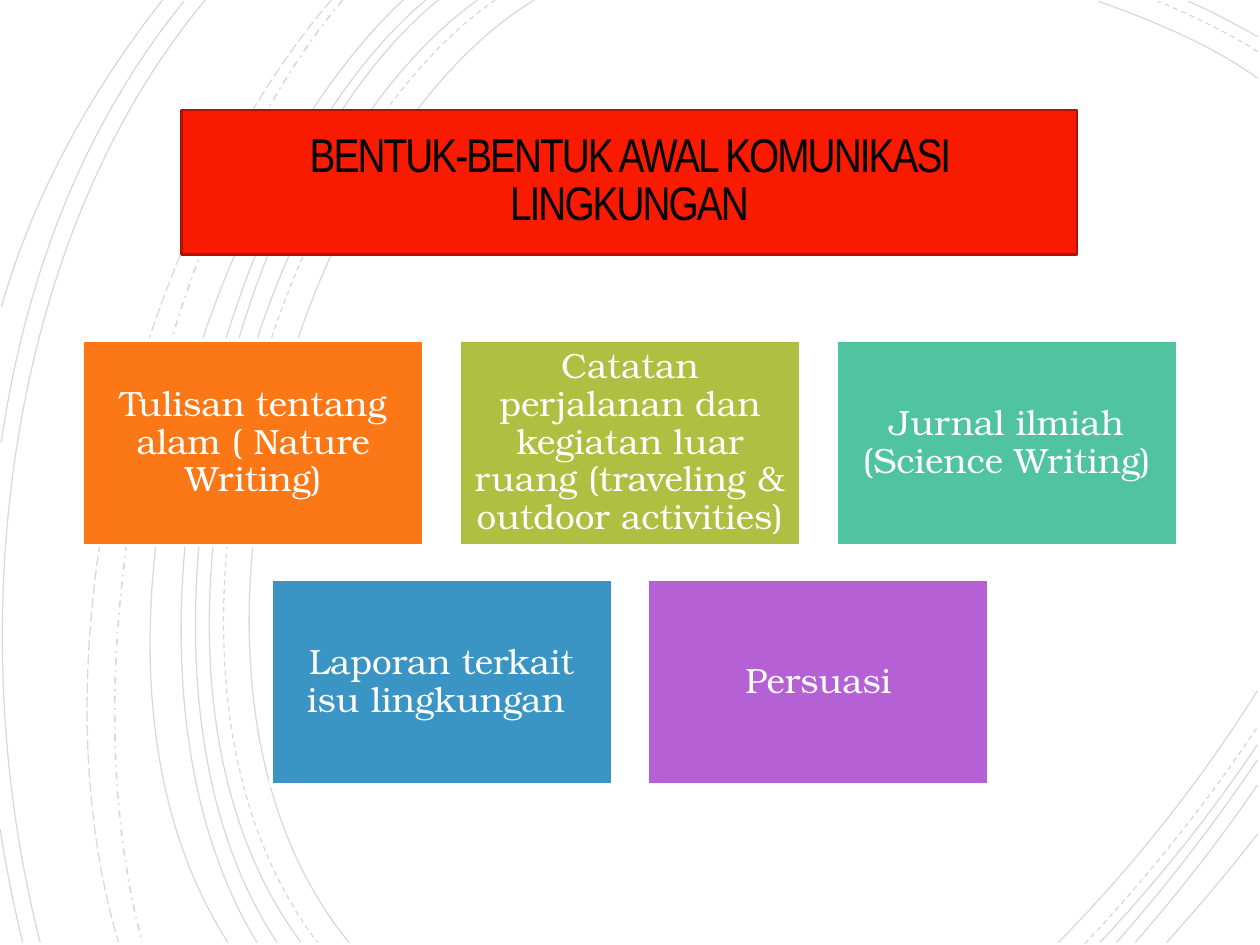
from lxml.etree import SubElement
from pptx import Presentation
from pptx.dml.color import RGBColor
from pptx.enum.dml import MSO_LINE as DASH
from pptx.enum.shapes import MSO_SHAPE as SHAPE
from pptx.enum.text import MSO_ANCHOR, PP_ALIGN
from pptx.oxml.ns import qn
from pptx.util import Inches, Pt

SLIDE_W, SLIDE_H = 10, 7.5
TITLE = "BENTUK-BENTUK AWAL KOMUNIKASI LINGKUNGAN"
ROWS = [
    [("Tulisan tentang alam ( Nature Writing)", "FC7715"),
     ("Catatan perjalanan dan kegiatan luar ruang (traveling & outdoor activities)", "AFBF41"),
     ("Jurnal ilmiah (Science Writing)", "50C49F")],
    [("Laporan terkait isu lingkungan ", "3B95C4"),
     ("Persuasi", "B560D4")],
]
BOX_W, BOX_H, GAP_X, PITCH_Y, ROWS_TOP = 2.71, 1.63, 0.28, 1.9, 2.7

# Background arcs by line style: start, two control points, end
ARCS = {
    (DASH.SOLID, 0.75): [
        [(4.24, 0), (2.36, 1.15), (1.07, 5.4), (2.77, 7.48)],
        [(9.98, 0.62), (9.59, 0.34), (9.13, 0.16), (8.72, 0.01)],
        [(8.4, 7.48), (8.97, 6.9), (9.52, 6.22), (9.98, 5.48)],
        [(3.79, 0), (2.02, 1.27), (0.82, 5.37), (2.39, 7.48)],
        [(9.98, 0.29), (9.8, 0.19), (9.62, 0.09), (9.43, 0.01)],
        [(8.73, 7.48), (9.17, 7.01), (9.6, 6.48), (9.98, 5.91)],
        [(3.48, 0), (1.83, 1.33), (0.82, 5.41), (2.2, 7.48)],
        [(8.86, 7.48), (9.25, 7.04), (9.63, 6.55), (9.98, 6.03)],
        [(3.38, 0), (1.73, 1.38), (0.73, 5.33), (2.04, 7.48)],
        [(9.01, 7.48), (9.35, 7.09), (9.68, 6.67), (9.98, 6.23)],
        [(3.2, 0), (1.63, 1.47), (0.4, 5.29), (1.81, 7.48)],
        [(9.26, 7.48), (9.5, 7.21), (9.75, 6.92), (9.98, 6.62)],
        [(1.63, 0), (0.08, 1.85), (-0.34, 4.9), (0.32, 7.48)],
        [(1.46, 0.01), (0.69, 0.96), (0.21, 2.14), (0.01, 3.51)],
        [(0, 6.58), (0.05, 6.89), (0.11, 7.19), (0.18, 7.48)],
        [(1.29, 0), (0.75, 0.69), (0.28, 1.5), (0.01, 2.44)],
    ],
    (DASH.DASH, 0.75): [
        [(3.93, 0), (2.13, 1.25), (0.92, 5.37), (2.52, 7.48)],
        [(9.98, 0.41), (9.73, 0.25), (9.45, 0.12), (9.19, 0.01)],
        [(8.61, 7.49), (9.09, 6.98), (9.56, 6.4), (9.98, 5.77)],
    ],
    (DASH.DASH_DOT, 1): [[(2.72, 0), (1.32, 1.66), (0.49, 5.09), (1.13, 7.48)]],
    (DASH.LONG_DASH, 0.75): [[(2.63, 0), (1.18, 1.69), (0.21, 4.99), (0.94, 7.48)]],
}


def rgb(color):
    return RGBColor.from_string(color)


def add_arc(slide, points, dash, width):
    """Draw a faint cubic curve: a polyline whose points become Bezier points."""
    start, *rest = [(Inches(x), Inches(y)) for x, y in points]
    builder = slide.shapes.build_freeform(*start, scale=1.0)
    builder.add_line_segments(rest, close=False)
    sp = builder.convert_to_shape()
    segments = list(sp._element.iter(qn("a:lnTo")))
    outline = segments[0].getparent()
    curve = SubElement(outline, qn("a:cubicBezTo"))
    for segment in segments:
        curve.append(segment[0])
        outline.remove(segment)
    sp.shadow.inherit = False
    sp.fill.background()
    sp.line.color.rgb = rgb("000000")
    sp.line.width = Pt(width)
    sp.line.dash_style = dash
    color = next(sp.line._ln.iter(qn("a:srgbClr")))
    SubElement(color, qn("a:alpha")).set("val", "15000")


def add_box(slide, box, text, fill, line, line_width, inset, font, size, color, spacing):
    """Add a filled rectangle with centred text and return its paragraph."""
    sp = slide.shapes.add_shape(SHAPE.RECTANGLE, *map(Inches, box))
    sp.shadow.inherit = False
    sp.fill.solid()
    sp.fill.fore_color.rgb = rgb(fill)
    sp.line.color.rgb = rgb(line)
    sp.line.width = Pt(line_width)
    tf = sp.text_frame
    tf.word_wrap = True
    tf.vertical_anchor = MSO_ANCHOR.MIDDLE
    tf.margin_left = tf.margin_right = tf.margin_top = tf.margin_bottom = Inches(inset)
    p = tf.paragraphs[0]
    p.text = text
    p.alignment = PP_ALIGN.CENTER
    p.line_spacing = spacing
    p.font.name, p.font.size, p.font.color.rgb = font, Pt(size), rgb(color)
    return p


def main():
    prs = Presentation()
    prs.slide_width, prs.slide_height = Inches(SLIDE_W), Inches(SLIDE_H)
    slide = prs.slides.add_slide(prs.slide_layouts[6])

    for (dash, width), arcs in ARCS.items():
        for points in arcs:
            add_arc(slide, points, dash, width)

    title = add_box(slide, (1.44, 0.87, 7.11, 1.15), TITLE, "F81B02", "AF1301", 1.25,
                    0.25, "Arial Narrow", 27, "000000", 0.85)
    title.runs[0]._r.get_or_add_rPr().set("spc", "-110")

    for i, row in enumerate(ROWS):
        row_w = len(row) * (BOX_W + GAP_X) - GAP_X
        left = (SLIDE_W - row_w) / 2
        for j, (text, fill) in enumerate(row):
            box = (left + j * (BOX_W + GAP_X), ROWS_TOP + i * PITCH_Y, BOX_W, BOX_H)
            add_box(slide, box, text, fill, "FFFFFF", 2,
                    0.08, "TeX Gyre Bonum", 20, "FFFFFF", 0.9)

    prs.save("out.pptx")


if __name__ == "__main__":
    main()
